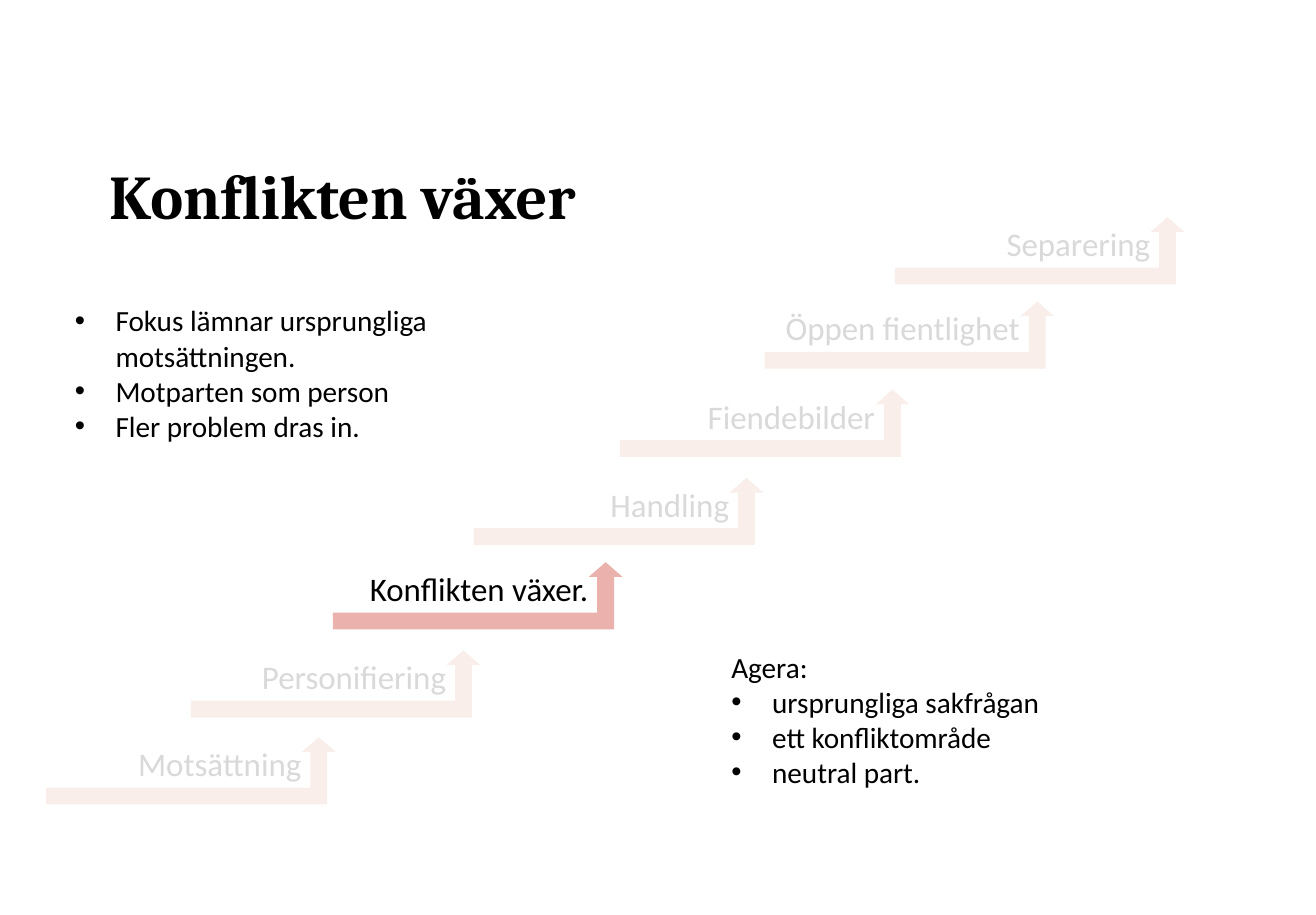
import pptx
import pptx.dml.color
import pptx.enum.shapes
import pptx.enum.text
import pptx.util
from lxml import etree
from pptx.oxml.ns import qn
from pptx.util import Inches

# Content
TITLE = "Konflikten växer"
# Stair steps from bottom to top: label, arrow left, arrow top
STEPS = [
    ("Motsättning", 0.35, 5.6),
    ("Personifiering", 1.45, 4.94),
    ("Konflikten växer.", 2.53, 4.27),
    ("Handling", 3.6, 3.63),
    ("Fiendebilder", 4.71, 2.96),
    ("Öppen fientlighet", 5.81, 2.29),
    ("Separering", 6.8, 1.65),
]
CURRENT_STEP = "Konflikten växer."
# Notes: box, heading or None, bullets
NOTES = [
    ((0.47, 2.25, 3.57, 1.18), None,
     ["Fokus lämnar ursprungliga motsättningen.", "Motparten som person",
      "Fler problem dras in."]),
    ((5.46, 4.88, 4.33, 1.18), "Agera:",
     ["ursprungliga sakfrågan", "ett konfliktområde", "neutral part."]),
]

# Look
BLACK, FADED_TEXT = "000000", "D9D9D9"
CURRENT_FILL, FADED_FILL = "EAB1AD", "F9EEE9"
ARROW_SIZE = (2.2, 0.51)
ARROW_ADJUSTMENTS = (0.25, 0.25, 0.218)
LABEL_SIZE = (2.09, 0.4)
LABEL_SHIFT = 0.15
BULLET_INDENT = 0.31


def rgb(color):
    return pptx.dml.color.RGBColor.from_string(color)


def format_font(paragraph, size, color, name="Calibri", bold=False):
    for run in paragraph.runs:
        run.font.name = name
        run.font.size = pptx.util.Pt(size)
        run.font.bold = bold
        run.font.color.rgb = rgb(color)


def set_margins(text_frame, left, top, right, bottom):
    text_frame.margin_left, text_frame.margin_top = Inches(left), Inches(top)
    text_frame.margin_right, text_frame.margin_bottom = Inches(right), Inches(bottom)


def add_bullet(paragraph):
    properties = paragraph._p.get_or_add_pPr()
    properties.set("marL", str(Inches(BULLET_INDENT)))
    properties.set("indent", str(-Inches(BULLET_INDENT)))
    etree.SubElement(properties, qn("a:buFont"), typeface="Arial")
    etree.SubElement(properties, qn("a:buChar"), char="•")


def add_text_box(slide, box):
    text_frame = slide.shapes.add_textbox(*map(Inches, box)).text_frame
    text_frame.word_wrap = True
    return text_frame


def add_title(slide):
    title = slide.shapes.title
    title.left, title.top, title.width, title.height = map(Inches, (0.83, 0.84, 4.7, 1.35))
    text_frame = title.text_frame
    text_frame.text = TITLE
    text_frame.vertical_anchor = pptx.enum.text.MSO_ANCHOR.MIDDLE
    set_margins(text_frame, 0, 0, 0, 0)
    paragraph = text_frame.paragraphs[0]
    paragraph.alignment = pptx.enum.text.PP_ALIGN.LEFT
    paragraph.line_spacing = 0.9
    format_font(paragraph, 34, BLACK, "Cambria", True)


def add_step(slide, label, left, top):
    is_current = label == CURRENT_STEP
    text_frame = add_text_box(slide, (left - LABEL_SHIFT, top, *LABEL_SIZE))
    set_margins(text_frame, 0.1, 0.05, 0, 0.05)
    text_frame.text = label
    paragraph = text_frame.paragraphs[0]
    paragraph.alignment = pptx.enum.text.PP_ALIGN.RIGHT
    format_font(paragraph, 18, BLACK if is_current else FADED_TEXT)

    arrow = slide.shapes.add_shape(
        pptx.enum.shapes.MSO_SHAPE.BENT_UP_ARROW,
        *map(Inches, (left, top, *ARROW_SIZE)))
    for index, value in enumerate(ARROW_ADJUSTMENTS):
        arrow.adjustments[index] = value
    arrow.shadow.inherit = False
    arrow.fill.solid()
    arrow.fill.fore_color.rgb = rgb(CURRENT_FILL if is_current else FADED_FILL)
    arrow.line.fill.background()


def add_note(slide, box, heading, bullets):
    text_frame = add_text_box(slide, box)
    lines = ([heading] if heading else []) + bullets
    text_frame.text = "\n".join(lines)
    for line, paragraph in zip(lines, text_frame.paragraphs):
        if line != heading:
            add_bullet(paragraph)
        format_font(paragraph, 16, BLACK)


def main():
    presentation = pptx.Presentation()
    presentation.slide_width, presentation.slide_height = Inches(10), Inches(6.95)
    slide = presentation.slides.add_slide(presentation.slide_layouts[5])
    add_title(slide)
    for step in STEPS:
        add_step(slide, *step)
    for note in NOTES:
        add_note(slide, *note)
    presentation.save("out.pptx")


if __name__ == "__main__":
    main()
